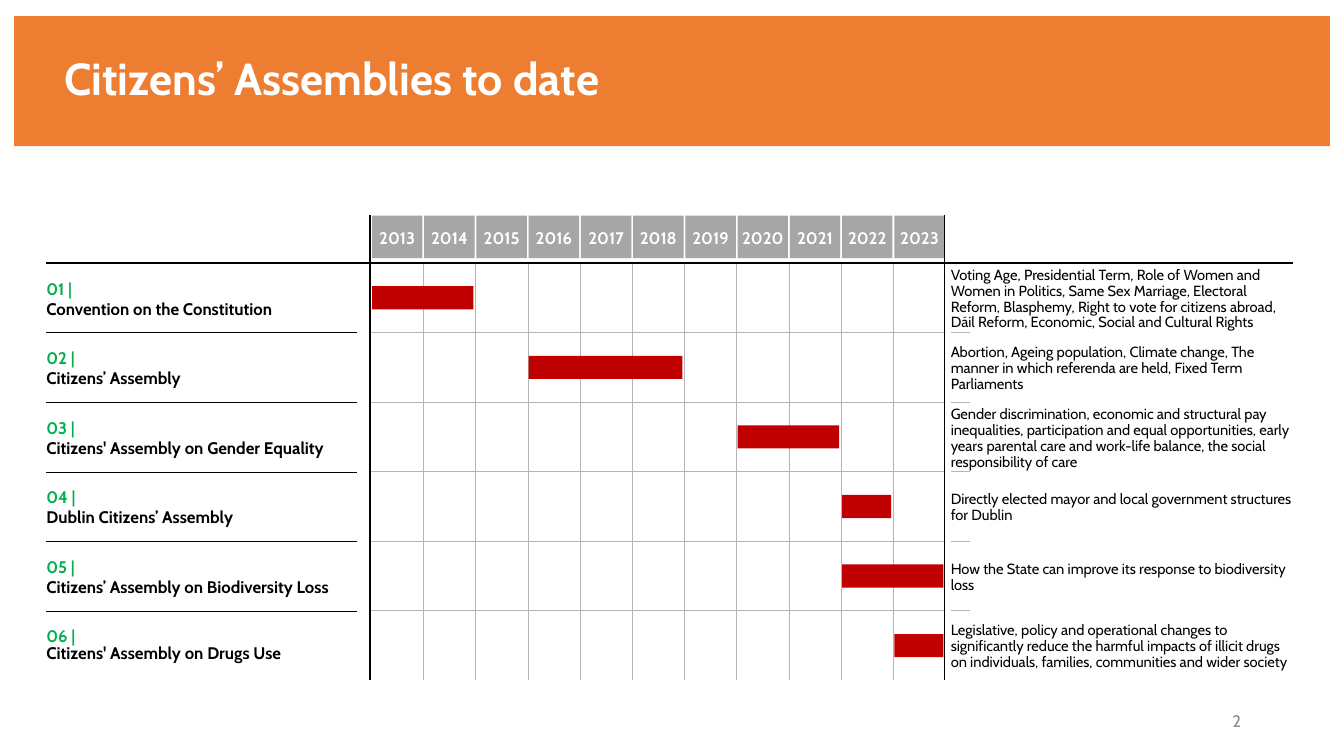
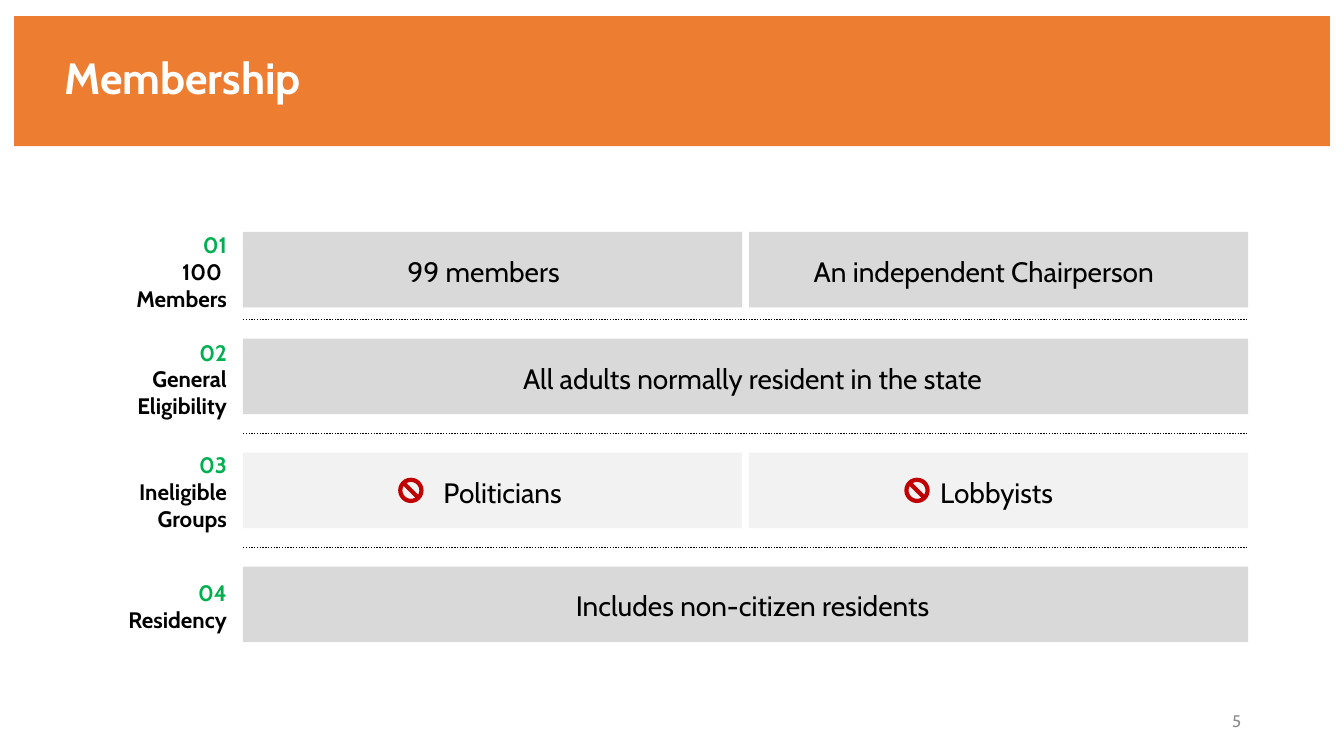
"""Build two slides on citizens' assemblies: a timeline and the membership rules."""
import pptx
import pptx.dml.color
import pptx.enum.dml
import pptx.enum.shapes
import pptx.enum.text
import pptx.oxml.ns
import pptx.util
import lxml.etree

Inches = pptx.util.Inches
Pt = pptx.util.Pt
SHAPE = pptx.enum.shapes.MSO_SHAPE
ALIGN = pptx.enum.text.PP_ALIGN
DOTTED = pptx.enum.dml.MSO_LINE.ROUND_DOT

FONT = "Cabin"
COLORS = {
    "band": "ED7D31", "white": "FFFFFF", "black": "000000",
    "number": "00B050", "red": "C00000", "year": "A6A6A6",
    "grid": "B4B4BA", "panel": "D9D9D9", "pale": "F2F2F2",
    "page": "8C8C8C",
}
DEFAULT_INSETS = (0.1, 0.05, 0.1, 0.05)
TIGHT_INSETS = (0, 0.02, 0.04, 0)

FIRST_YEAR, LAST_YEAR = 2013, 2023
YEAR_LEFT, YEAR_STEP = 3.69, 0.518
CHART_LEFT, CHART_RIGHT = 3.67, 9.37
ROWS_TOP, ROW_STEP, ROWS_BOTTOM = 2.61, 0.69, 6.75
LABEL_LEFT, TOPIC_LEFT = 0.46, 9.43

ASSEMBLIES = [
    ("Convention on the Constitution", 2013, 2014,
     "Voting Age, Presidential Term, Role of Women and Women in Politics, "
     "Same Sex Marriage, Electoral Reform, Blasphemy, Right to vote for "
     "citizens abroad, Dáil Reform, Economic, Social and Cultural Rights"),
    ("Citizens’ Assembly", 2016, 2018,
     "Abortion, Ageing population, Climate change, The manner in which "
     "referenda are held, Fixed Term Parliaments"),
    ("Citizens' Assembly on Gender Equality", 2020, 2021,
     "Gender discrimination, economic and structural pay inequalities, "
     "participation and equal opportunities, early years parental care and "
     "work-life balance, the social responsibility of care"),
    ("Dublin Citizens’ Assembly", 2022, 2022,
     "Directly elected mayor and local government structures for Dublin"),
    ("Citizens’ Assembly on Biodiversity Loss", 2022, 2023,
     "How the State can improve its response to biodiversity loss"),
    ("Citizens' Assembly on Drugs Use", 2023, 2023,
     "Legislative, policy and operational changes to significantly reduce "
     "the harmful impacts of illicit drugs on individuals, families, "
     "communities and wider society"),
]

PANEL_LEFT, PANEL_RIGHT, PANEL_HEIGHT, PANEL_GAP = 2.41, 12.38, 0.75, 0.07
HALF_WIDTH = (PANEL_RIGHT - PANEL_LEFT - PANEL_GAP) / 2
HALF_LEFTS = (PANEL_LEFT, PANEL_LEFT + HALF_WIDTH + PANEL_GAP)
HALF_TEXTS = ((4.04, 1.93), (8.07, 3.67))
FULL_TEXT = (4.04, 6.89)
RULES = [
    (2.3, 2.25, 0.85, ["100 ", "Members"],
     ["99 members", "An independent Chairperson"], "panel", ALIGN.LEFT),
    (3.36, 3.3, 0.88, ["General Eligibility"],
     ["All adults normally resident in the state"], "panel", ALIGN.CENTER),
    (4.49, 4.42, 0.88, ["Ineligible Groups"],
     ["Politicians", "Lobbyists"], "pale", ALIGN.CENTER),
    (5.62, 5.7, 0.58, ["Residency"],
     ["Includes non-citizen residents"], "panel", ALIGN.CENTER),
]


def rgb(color):
    """Look up a palette colour."""
    return pptx.dml.color.RGBColor.from_string(COLORS[color])


def fill_text(frame, lines, size, bold=False, align=ALIGN.LEFT,
              insets=DEFAULT_INSETS, spacing=None, after=None):
    """Write (text, colour) lines into a frame, one paragraph each."""
    frame.word_wrap = True
    frame.vertical_anchor = pptx.enum.text.MSO_ANCHOR.MIDDLE
    (frame.margin_left, frame.margin_top,
     frame.margin_right, frame.margin_bottom) = map(Inches, insets)
    for index, (text, color) in enumerate(lines):
        paragraph = frame.add_paragraph() if index else frame.paragraphs[0]
        paragraph.alignment = align
        if spacing is not None:
            paragraph.line_spacing = spacing
        if after is not None:
            paragraph.space_after = after
        run = paragraph.add_run()
        run.text = text
        run.font.name = FONT
        run.font.size = Pt(size)
        run.font.bold = bold
        run.font.color.rgb = rgb(color)


def add_text(slide, left, top, width, height, lines, size, **style):
    """Add a text box."""
    box = slide.shapes.add_textbox(*map(Inches, (left, top, width, height)))
    fill_text(box.text_frame, lines, size, **style)


def add_block(slide, left, top, width, height, color):
    """Add a plain filled rectangle."""
    block = slide.shapes.add_shape(
        SHAPE.RECTANGLE, *map(Inches, (left, top, width, height)))
    block.shadow.inherit = False
    block.fill.solid()
    block.fill.fore_color.rgb = rgb(color)
    block.line.fill.background()
    return block


def add_line(slide, x1, y1, x2, y2, color, weight, dash=None):
    """Add a straight line without a shadow."""
    line = slide.shapes.add_connector(
        pptx.enum.shapes.MSO_CONNECTOR.STRAIGHT,
        *map(Inches, (x1, y1, x2, y2)))
    line.line.color.rgb = rgb(color)
    line.line.width = Pt(weight)
    if dash is not None:
        line.line.dash_style = dash
    lxml.etree.SubElement(line._element.spPr,
                          pptx.oxml.ns.qn("a:effectLst"))


def add_ban_sign(slide, left, top):
    """Add a red prohibition sign."""
    ring = slide.shapes.add_shape(
        SHAPE.OVAL, *map(Inches, (left, top, 0.21, 0.21)))
    ring.shadow.inherit = False
    ring.fill.background()
    ring.line.color.rgb = rgb("red")
    ring.line.width = Pt(3)
    add_line(slide, left + 0.03, top + 0.03, left + 0.18, top + 0.18,
             "red", 3)


def add_page(deck, title, title_size, number):
    """Add a slide with the title band and page number."""
    slide = deck.slides.add_slide(deck.slide_layouts[6])
    add_block(slide, 0.14, 0.16, 13.05, 1.29, "band")
    add_text(slide, 0.54, 0.45, 11.02, 0.7, [(title, "white")], title_size,
             bold=True, spacing=0.9)
    add_text(slide, 11.41, 6.95, 1, 0.4, [(number, "page")], 12,
             align=ALIGN.RIGHT, after=Pt(6))
    return slide


def year_left(year):
    """Return the left edge of a year's column."""
    return YEAR_LEFT + (year - FIRST_YEAR) * YEAR_STEP


def add_timeline_frame(slide):
    """Draw the year headings and the grid."""
    for year in range(FIRST_YEAR, LAST_YEAR + 1):
        left = year_left(year)
        heading = add_block(slide, left, 2.14, 0.5, 0.42, "year")
        fill_text(heading.text_frame, [(str(year), "white")], 12, bold=True,
                  align=ALIGN.CENTER, insets=(0.04, 0.02, 0.04, 0))
        if year > FIRST_YEAR:
            add_line(slide, left - 0.01, ROWS_TOP, left - 0.01, ROWS_BOTTOM,
                     "grid", 0.25)
    for row in range(1, len(ASSEMBLIES)):
        y = ROWS_TOP + row * ROW_STEP
        add_line(slide, LABEL_LEFT, y, 3.53, y, "black", 0.25, DOTTED)
        add_line(slide, CHART_LEFT, y, CHART_RIGHT, y, "grid", 0.5)
        add_line(slide, TOPIC_LEFT, y, 9.62, y, "grid", 0.5)
    for x in (CHART_LEFT, CHART_RIGHT):
        add_line(slide, x, 2.13, x, ROWS_BOTTOM, "black", 1)
    add_line(slide, LABEL_LEFT, ROWS_TOP, 12.82, ROWS_TOP, "black", 1)


def add_assembly(slide, row, name, start, end, topics):
    """Add one assembly's label, bar and topics."""
    top = ROWS_TOP + row * ROW_STEP
    is_last = row == len(ASSEMBLIES) - 1
    add_text(slide, LABEL_LEFT, top + 0.13, 3.5, 0.42,
             [(f"{row + 1:02} |", "number"), (name, "black")], 12, bold=True,
             insets=TIGHT_INSETS, spacing=Pt(12.2) if is_last else None)
    add_block(slide, year_left(start), top + 0.23,
              (end - start + 1) * YEAR_STEP - 0.03, 0.23, "red")
    add_text(slide, TOPIC_LEFT, top + 0.02, 3.45, 0.66, [(topics, "black")],
             10.5, insets=TIGHT_INSETS, spacing=0.9)


def add_rule(slide, number, top, label_top, label_height, label, entries,
             color, align):
    """Add one membership rule with its label and panels."""
    add_text(slide, 0.8, label_top, 1.45, label_height,
             [(f"{number:02}", "number")] + [(text, "black") for text in label],
             16, bold=True, align=ALIGN.RIGHT, insets=(0, 0.04, 0, 0))
    if len(entries) == 1:
        lefts, width, texts = [PANEL_LEFT], PANEL_RIGHT - PANEL_LEFT, [FULL_TEXT]
    else:
        lefts, width, texts = HALF_LEFTS, HALF_WIDTH, HALF_TEXTS
    for left, (text_left, text_width), entry in zip(lefts, texts, entries):
        add_block(slide, left, top, width, PANEL_HEIGHT, color)
        add_text(slide, text_left, top + 0.2, text_width, 0.36,
                 [(entry, "black")], 20, align=align, insets=TIGHT_INSETS)
        if color == "pale":
            add_ban_sign(slide, left + 1.56, top + 0.27)


def build_timeline(deck):
    """Build the timeline slide."""
    slide = add_page(deck, "Citizens’ Assemblies to date", 32, "2")
    add_timeline_frame(slide)
    for row, assembly in enumerate(ASSEMBLIES):
        add_assembly(slide, row, *assembly)


def build_membership(deck):
    """Build the membership slide."""
    slide = add_page(deck, "Membership", 31.2, "5")
    for number, rule in enumerate(RULES, 1):
        add_rule(slide, number, *rule)
    for gap in range(3):
        y = 3.17 + gap * 1.13
        add_line(slide, PANEL_LEFT, y, PANEL_RIGHT, y, "black", 1, DOTTED)


def main():
    """Build and save the deck."""
    deck = pptx.Presentation()
    deck.slide_width = Inches(13.33)
    deck.slide_height = Inches(7.5)
    build_timeline(deck)
    build_membership(deck)
    deck.save("out.pptx")


if __name__ == "__main__":
    main()
